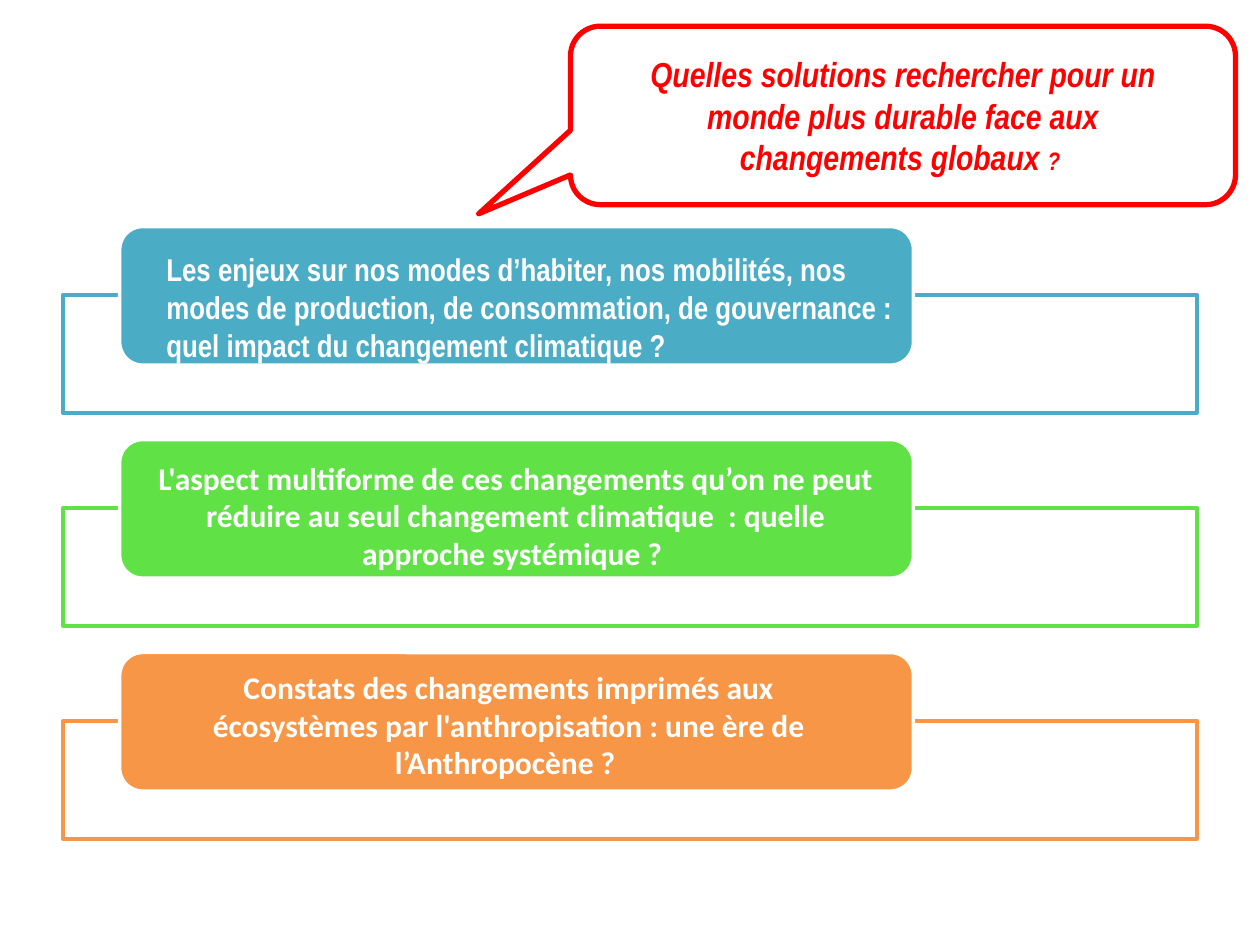
from pptx import Presentation
from pptx.dml.color import RGBColor
from pptx.enum.shapes import MSO_SHAPE
from pptx.enum.text import MSO_ANCHOR, MSO_AUTO_SIZE, PP_ALIGN
from pptx.oxml.ns import qn
from pptx.util import Pt
from lxml import etree

RECTANGLE = MSO_SHAPE.RECTANGLE
ROUNDED = MSO_SHAPE.ROUNDED_RECTANGLE
CALLOUT = MSO_SHAPE.ROUNDED_RECTANGULAR_CALLOUT
LEFT, CENTER = PP_ALIGN.LEFT, PP_ALIGN.CENTER
MIDDLE = MSO_ANCHOR.MIDDLE
NO_AUTOFIT = MSO_AUTO_SIZE.NONE

WHITE, RED = "FFFFFF", "FF0000"
TITLE_BOX = (350, 24, 332, 84)
CALLOUT_BOX = (326, 15, 380, 102)
FIRST_PANEL_BOX = (36, 168.5, 648, 67.5)
PANEL_PITCH = 121.7

# Colour, label box, alignment, font and text of each panel
PANELS = [
    ("4BACC6", (88, 139.5, 442, 73), LEFT, "Arial Narrow",
     "Les enjeux sur nos modes d’habiter, nos mobilités, nos modes de production, "
     "de consommation, de gouvernance : quel impact du changement climatique ?"),
    ("60E146", (82, 258.5, 425.5, 73), CENTER, "Calibri",
     "L'aspect multiforme de ces changements qu’on ne peut réduire au seul "
     "changement climatique  : quelle approche systémique ? "),
    ("F79646", (88, 378, 405.5, 73), CENTER, "Calibri",
     "Constats des changements imprimés aux écosystèmes par l'anthropisation : "
     "une ère de l’Anthropocène ? "),
]


def color(value):
    return RGBColor.from_string(value)


def points(box):
    return [Pt(length) for length in box]


def add_outlined(page, kind, box, fill, line, width):
    shape = page.shapes.add_shape(kind, *points(box))
    shape.shadow.inherit = False
    if fill is None:
        shape.fill.background()
    else:
        shape.fill.solid()
        shape.fill.fore_color.rgb = color(fill)
    shape.line.color.rgb = color(line)
    shape.line.width = Pt(width)
    return shape


def set_opacity(shape, percent):
    fill_color = shape.fill._xPr.find(qn("a:solidFill"))[0]
    etree.SubElement(fill_color, qn("a:alpha"), val=str(percent * 1000))


def add_title(page, box):
    title = page.shapes.title
    title.left, title.top, title.width, title.height = points(box)
    frame = title.text_frame
    frame.word_wrap = True
    frame.auto_size = NO_AUTOFIT
    frame.vertical_anchor = MIDDLE
    para = frame.paragraphs[0]
    para.alignment = CENTER
    font = para.font
    font.name, font.size, font.bold, font.italic = "Arial Narrow", Pt(19.8), True, True
    font.color.rgb = color(RED)
    for text, size in (
        ("Quelles solutions rechercher pour un monde plus durable "
         "face aux changements globaux ", 19.8),
        ("? ", 14.4),
    ):
        span = para.add_run()
        span.text = text
        span.font.size = Pt(size)


def add_panel(page, box, accent):
    """Draw a wide frame with a coloured tab across its top edge."""
    left, top, width, height = box
    frame = add_outlined(page, RECTANGLE, box, WHITE, accent, 2)
    set_opacity(frame, 90)
    tab_box = (left + width * 0.05, top - 39, width * 0.7, 79.2)
    add_outlined(page, ROUNDED, tab_box, accent, WHITE, 2)


def add_label(page, box, text, alignment, font_name):
    label = page.shapes.add_textbox(*points(box))
    label.text_frame.word_wrap = True
    para = label.text_frame.paragraphs[0]
    para.text = text
    para.alignment = alignment
    para.font.name, para.font.size, para.font.bold = font_name, Pt(18), True
    para.font.color.rgb = color(WHITE)


def add_callout(page, box):
    callout = add_outlined(page, CALLOUT, box, None, RED, 3)
    for index, value in enumerate((-0.638, 0.551, 0.167)):
        callout.adjustments[index] = value


def main():
    deck = Presentation()
    deck.slide_width, deck.slide_height = Pt(720), Pt(540)
    page = deck.slides.add_slide(deck.slide_layouts.get_by_name("Title Only"))
    add_title(page, TITLE_BOX)
    left, top, width, height = FIRST_PANEL_BOX
    for row, (accent, *_) in enumerate(PANELS):
        add_panel(page, (left, top + row * PANEL_PITCH, width, height), accent)
    for _, label_box, alignment, font_name, text in PANELS:
        add_label(page, label_box, text, alignment, font_name)
    add_callout(page, CALLOUT_BOX)
    deck.save("out.pptx")


if __name__ == "__main__":
    main()
